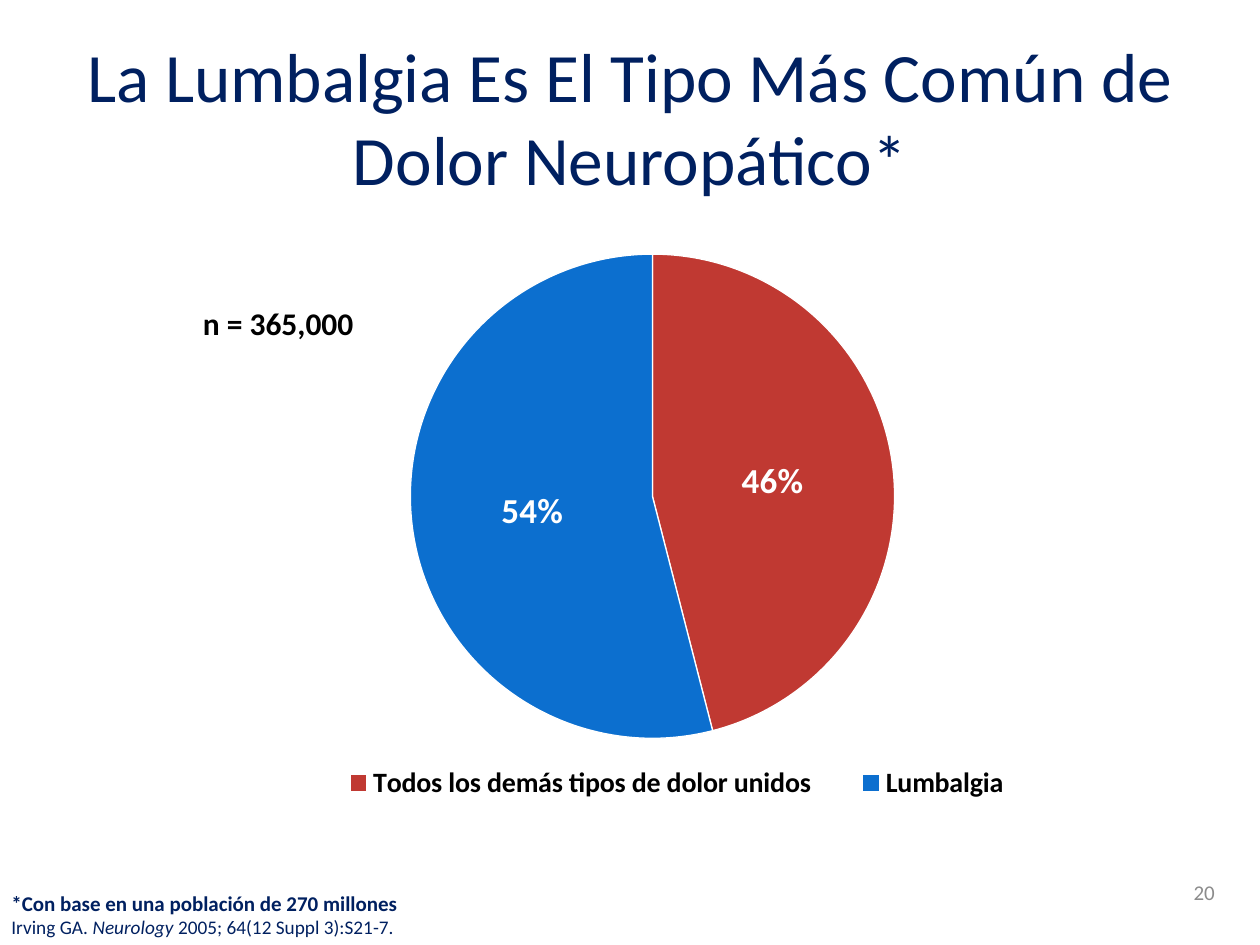
"""Build a slide with a pie chart of low back pain among neuropathic pain types."""
import pptx
import pptx.chart.data
import pptx.dml.color
import pptx.enum.chart
import pptx.enum.text
import pptx.oxml
import pptx.oxml.ns
import pptx.util
from dataclasses import dataclass

Pt = pptx.util.Pt
Anchor = pptx.enum.text.MSO_ANCHOR
Align = pptx.enum.text.PP_ALIGN


@dataclass(frozen=True)
class Theme:
    font: str = "Calibri"
    navy: str = "002060"
    black: str = "000000"
    white: str = "FFFFFF"
    gray: str = "8C8C8C"
    slices: tuple = ("C03932", "0C6FCF")
    title: float = 39.6
    value: float = 20
    sample: float = 18
    legend: float = 16
    note: float = 12
    citation: float = 11


THEME = Theme()


def rgb(color):
    return pptx.dml.color.RGBColor.from_string(color)


def set_font(font, size, color, bold=False, italic=False):
    font.name, font.size = THEME.font, Pt(size)
    font.bold, font.italic = bold, italic
    font.color.rgb = rgb(color)


def write(paragraph, text, *, align=Align.LEFT, **style):
    paragraph.alignment = align
    run = paragraph.add_run()
    run.text = text
    set_font(run.font, **style)


def place(parent, index, x, y, width, height, inner=False):
    target = '<c:layoutTarget val="inner"/>' if inner else ""
    layout = pptx.oxml.parse_xml(
        f'<c:layout {pptx.oxml.ns.nsdecls("c")}><c:manualLayout>{target}'
        '<c:xMode val="edge"/><c:yMode val="edge"/>'
        f'<c:x val="{x}"/><c:y val="{y}"/><c:w val="{width}"/><c:h val="{height}"/>'
        "</c:manualLayout></c:layout>")
    for existing in parent.findall(pptx.oxml.ns.qn("c:layout")):
        parent.remove(existing)
    parent.insert(index, layout)


class SlideBuilder:
    def __init__(self, presentation, theme):
        self.theme = theme
        self.slide = presentation.slides.add_slide(presentation.slide_layouts[6])

    def text_box(self, box, anchor=Anchor.TOP, margins=(0, 0), wrap=True):
        shape = self.slide.shapes.add_textbox(*map(Pt, box))
        frame = shape.text_frame
        frame.word_wrap, frame.vertical_anchor = wrap, anchor
        frame.margin_left = frame.margin_right = Pt(margins[0])
        frame.margin_top = frame.margin_bottom = Pt(margins[1])
        return frame

    def pie(self, box, categories, values):
        theme = self.theme
        data = pptx.chart.data.CategoryChartData()
        data.categories = categories
        data.add_series("Series 1", values)
        chart = self.slide.shapes.add_chart(
            pptx.enum.chart.XL_CHART_TYPE.PIE, *map(Pt, box), data).chart
        chart.has_title = False
        set_font(chart.font, theme.legend, theme.black)
        plot = chart.plots[0]
        plot.vary_by_categories = True
        for index, color in enumerate(theme.slices):
            point = plot.series[0].points[index].format
            point.fill.solid()
            point.fill.fore_color.rgb = rgb(color)
            point.line.color.rgb = rgb(theme.white)
            point.line.width = Pt(0.75)
        plot.has_data_labels = True
        labels = plot.data_labels
        labels.show_value, labels.show_percentage = True, False
        labels.number_format, labels.number_format_is_linked = '#,##0"%"', False
        labels.position = pptx.enum.chart.XL_LABEL_POSITION.CENTER
        set_font(labels.font, theme.value, theme.white, bold=True)
        chart.has_legend = True
        legend = chart.legend
        legend.position = pptx.enum.chart.XL_LEGEND_POSITION.BOTTOM
        legend.include_in_layout = False
        set_font(legend.font, theme.legend, theme.black, bold=True)
        place(plot._element.getparent(), 0, 0.316, 0.117, 0.407, 0.717, inner=True)
        place(legend._element, 1, 0.23, 0.86, 0.62, 0.08)


def main():
    presentation = pptx.Presentation()
    presentation.slide_width, presentation.slide_height = Pt(720), Pt(540)
    builder = SlideBuilder(presentation, THEME)

    title = builder.text_box((36, 21.6, 648, 90), Anchor.MIDDLE, (7.2, 3.6))
    write(title.paragraphs[0], "La Lumbalgia Es El Tipo Más Común de Dolor Neuropático*",
          align=Align.CENTER, size=THEME.title, color=THEME.navy)
    number = builder.text_box((533.5, 495.4, 167.8, 28.8), Anchor.MIDDLE, (7.2, 3.6))
    write(number.paragraphs[0], "20", align=Align.RIGHT, size=THEME.note, color=THEME.gray)

    builder.pie((19.4, 100.1, 680.4, 385.9),
                ("Todos los demás tipos de dolor unidos", "Lumbalgia"), (46, 54))

    sample = builder.text_box((115.9, 173.5, 87.1, 21.6), wrap=False)
    write(sample.paragraphs[0], "n = 365,000", size=THEME.sample, color=THEME.black, bold=True)

    notes = builder.text_box((6.5, 508.3, 682.6, 28.1), Anchor.BOTTOM)
    write(notes.paragraphs[0], "*Con base en una población de 270 millones",
          size=THEME.note, color=THEME.navy, bold=True)
    citation = notes.add_paragraph()
    for text, italic in (("Irving GA. ", False), ("Neurology", True),
                         (" 2005; 64(12 Suppl 3):S21-7.", False)):
        write(citation, text, size=THEME.citation, color=THEME.navy, italic=italic)

    presentation.save("out.pptx")


if __name__ == "__main__":
    main()
